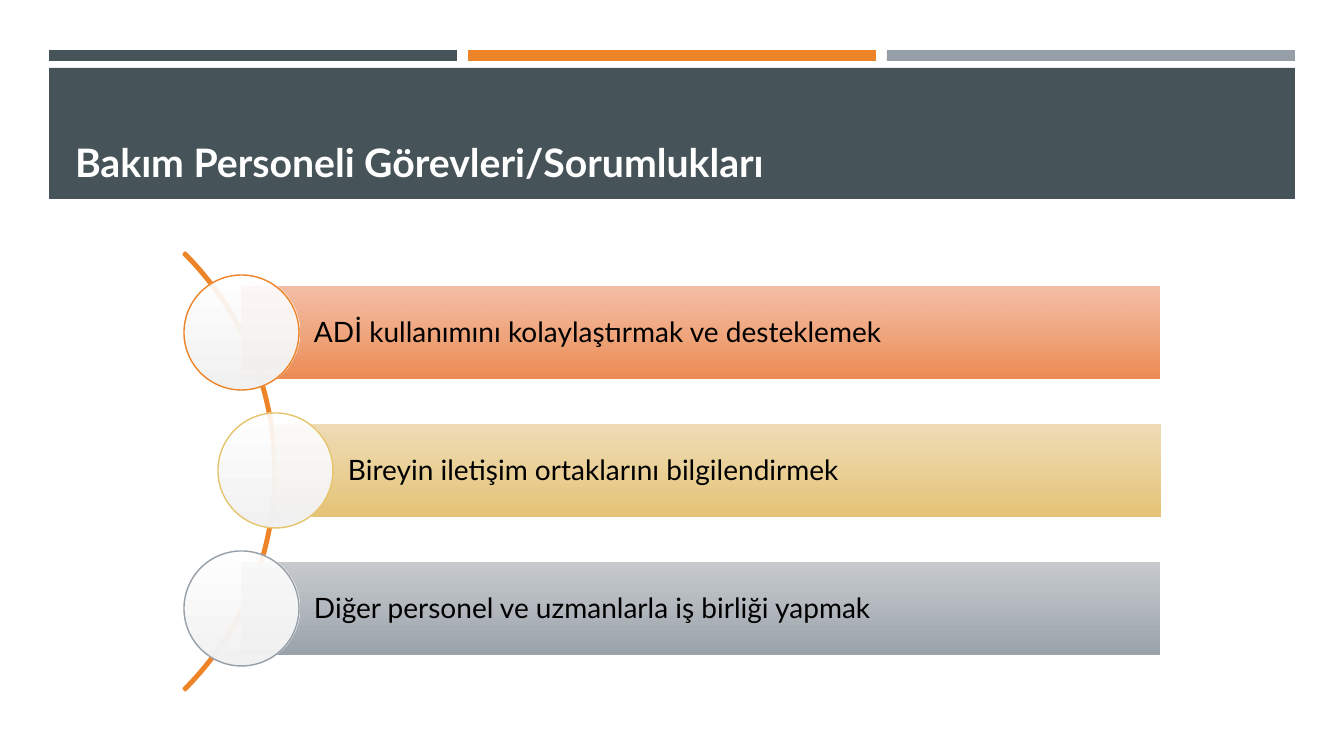
from dataclasses import dataclass

from lxml import etree
from pptx import Presentation
from pptx import util as u
from pptx.dml.color import RGBColor
from pptx.enum import shapes, text
from pptx.oxml import ns

EMU_PER_PX = 914400 / 100.8


@dataclass(frozen=True)
class Theme:
    font: str = "Lato"
    title_size: int = 28
    body_size: int = 20
    slate: str = "465359"
    orange: str = "ED8428"
    gray: str = "969FA7"
    gold: str = "E6C46D"
    white: str = "FFFFFF"
    black: str = "000000"
    salmon_bar: tuple = ("F3B89D", "ED8C53")
    gold_bar: tuple = ("EED9AE", "E6C476")
    gray_bar: tuple = ("C0C5C9", "9BA3AB")
    disc: tuple = ("FFFFFF", "F2F2F2")


THEME = Theme()


def px(n):
    return u.Emu(round(n * EMU_PER_PX))


def rgb(color):
    return RGBColor.from_string(color)


def add_shape(s, kind, box, fill=None, line=None, weight=1):
    sp = s.shapes.add_shape(kind, *map(px, box))
    sp.shadow.inherit = False
    if isinstance(fill, tuple):
        fill_gradient(sp, fill)
    elif fill:
        sp.fill.solid()
        sp.fill.fore_color.rgb = rgb(fill)
    else:
        sp.fill.background()
    if line:
        sp.line.color.rgb = rgb(line)
        sp.line.width = u.Pt(weight)
    else:
        sp.line.fill.background()
    return sp


def fill_gradient(sp, colors):
    sp.fill.gradient()
    sp.fill.gradient_angle = 270
    for stop, color in zip(sp.fill.gradient_stops, colors):
        stop.color.rgb = rgb(color)
    first = sp._element.spPr.find(".//" + ns.qn("a:srgbClr"))
    etree.SubElement(first, ns.qn("a:alpha")).set("val", "90000")


def set_text(sp, words, size, color, anchor, insets, bold=False):
    tf = sp.text_frame
    tf.text = words
    tf.word_wrap = True
    tf.vertical_anchor = anchor
    tf.margin_left, tf.margin_top, tf.margin_right, tf.margin_bottom = map(px, insets)
    p = tf.paragraphs[0]
    p.alignment = text.PP_ALIGN.LEFT
    r = p.runs[0]
    r.font.name = THEME.font
    r.font.size = u.Pt(size)
    r.font.bold = bold
    r.font.color.rgb = rgb(color)
    return p


def add_header(s, title):
    rect = shapes.MSO_SHAPE.RECTANGLE
    for i, color in enumerate((THEME.slate, THEME.orange, THEME.gray)):
        add_shape(s, rect, (49 + 419 * i, 50, 408, 11), color)
    add_shape(s, rect, (49, 68, 1246, 131), THEME.slate)
    tb = s.shapes.add_textbox(*map(px, (65, 78, 1216, 112)))
    set_text(tb, title, THEME.title_size, THEME.white,
             text.MSO_ANCHOR.BOTTOM, (10, 5, 10, 5), bold=True)


def add_arc(s):
    sp = add_shape(s, shapes.MSO_SHAPE.BLOCK_ARC, (-343, 162, 619, 619),
                   line=THEME.orange, weight=1.75)
    for i, value in enumerate((189, 27, 0.004)):
        sp.adjustments[i] = value


def add_duty(s, left, top, words, colors, outline):
    right, height, diameter = 1160, 92, 115
    bar = add_shape(s, shapes.MSO_SHAPE.RECTANGLE,
                    (left, top, right - left, height), colors)
    p = set_text(bar, words, THEME.body_size, THEME.black,
                 text.MSO_ANCHOR.MIDDLE, (73, 6, 6, 6))
    p.line_spacing = 0.9
    disc = (left - diameter // 2, top + (height - diameter) // 2, diameter, diameter)
    add_shape(s, shapes.MSO_SHAPE.OVAL, disc, THEME.disc, outline)


def main():
    prs = Presentation()
    prs.slide_width, prs.slide_height = px(1344), px(756)
    s = prs.slides.add_slide(prs.slide_layouts[6])
    add_header(s, "Bakım Personeli Görevleri/Sorumlukları")
    add_arc(s)
    duties = (
        (241, "ADİ kullanımını kolaylaştırmak ve desteklemek", THEME.salmon_bar, THEME.orange),
        (275, "Bireyin iletişim ortaklarını bilgilendirmek", THEME.gold_bar, THEME.gold),
        (241, "Diğer personel ve uzmanlarla iş birliği yapmak", THEME.gray_bar, THEME.gray),
    )
    for i, (left, words, colors, outline) in enumerate(duties):
        add_duty(s, left, 287 + 138 * i, words, colors, outline)
    prs.save("out.pptx")


if __name__ == "__main__":
    main()
